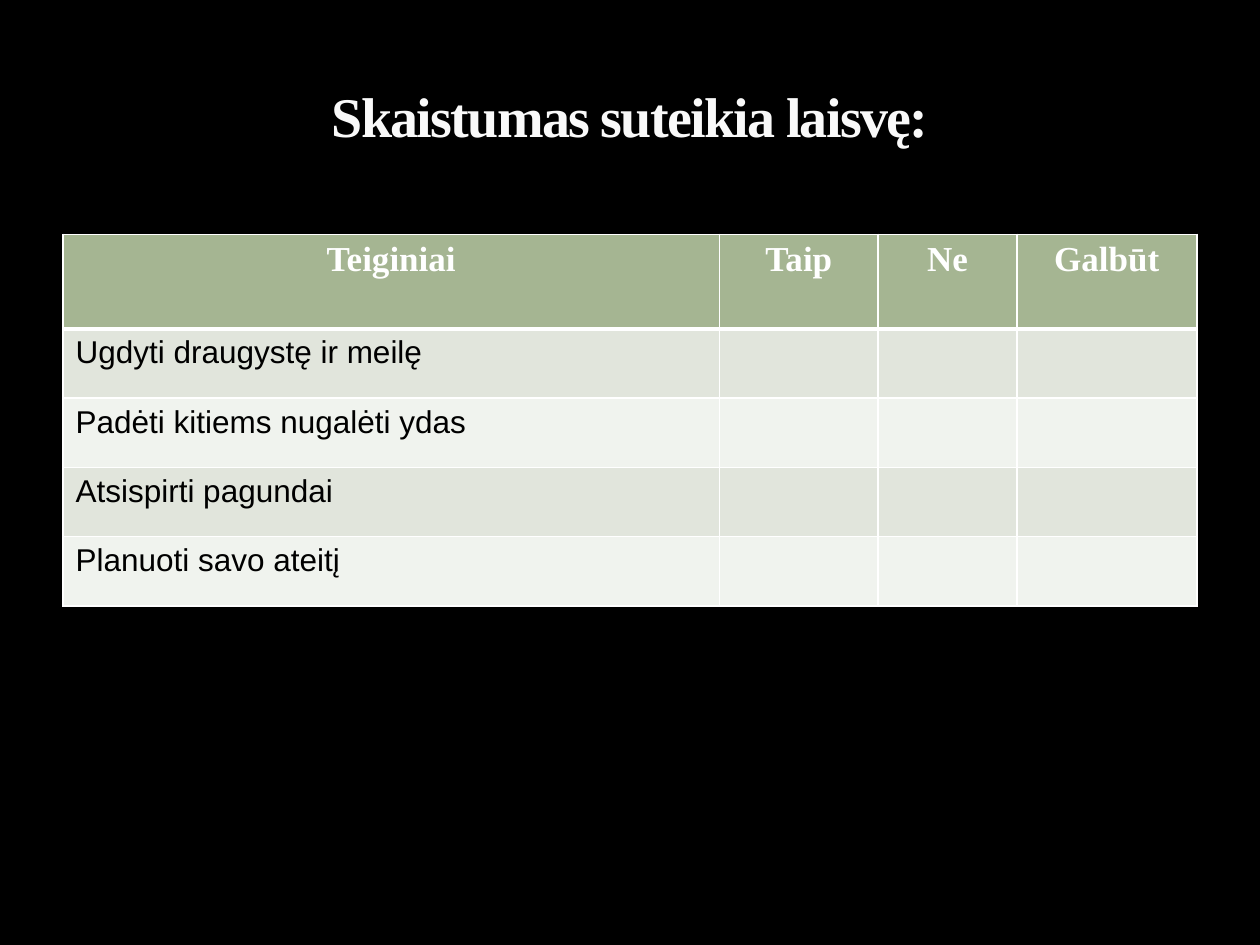
"""Build a slide with a titled table for answering statements about freedom."""
import lxml.etree
import pptx
import pptx.dml.color
import pptx.enum.text
import pptx.oxml.ns
import pptx.util

theme = {
    "back": "000000", "title": "F9F9F9", "line": "FFFFFF",
    "head": "A5B592", "bands": ["E1E5DC", "F0F3EE"],
    "light": "FFFFFF", "dark": "000000",
    "serif": "Times New Roman", "sans": "Arial",
    "title size": 32, "head size": 20, "body size": 18,
}
names = ["Teiginiai", "Taip", "Ne", "Galbūt"]
claims = ["Ugdyti draugystę ir meilę", "Padėti kitiems nugalėti ydas",
          "Atsispirti pagundai", "Planuoti savo ateitį"]
grid = [names] + [[claim, "", "", ""] for claim in claims]
widths = [5.21, 1.26, 1.1, 1.43]
heights = [0.75] + [0.55] * len(claims)
tint = pptx.dml.color.RGBColor.from_string
inch = pptx.util.Inches
center = pptx.enum.text.PP_ALIGN.CENTER


def style(para, face, size, color, bold):
    para.font.size = pptx.util.Pt(size)
    for run in para.runs:
        run.font.name = face
        run.font.size = pptx.util.Pt(size)
        run.font.bold = bold
        run.font.color.rgb = tint(color)


def border(cell, side, width):
    name = pptx.oxml.ns.qn
    props = cell._tc.get_or_add_tcPr()
    line = lxml.etree.SubElement(props, name(f"a:ln{side}"), w=str(pptx.util.Pt(width)))
    fill = lxml.etree.SubElement(line, name("a:solidFill"))
    lxml.etree.SubElement(fill, name("a:srgbClr"), val=theme["line"])


deck = pptx.Presentation()
deck.slide_width, deck.slide_height = inch(10), inch(7.5)
slide = deck.slides.add_slide(deck.slide_layouts[5])
slide.background.fill.solid()
slide.background.fill.fore_color.rgb = tint(theme["back"])

edge = int(deck.slide_width * 0.05)
wide = deck.slide_width - 2 * edge
title = slide.shapes.title
title.left, title.top = edge, inch(0.17)
title.width, title.height = wide, inch(1.06)
title.text_frame.text = "Skaistumas suteikia laisvę:"
title.text_frame.vertical_anchor = pptx.enum.text.MSO_ANCHOR.BOTTOM
para = title.text_frame.paragraphs[0]
para.alignment = center
style(para, theme["serif"], theme["title size"], theme["title"], True)
para.runs[0].font._element.set("spc", "-100")

frame = slide.shapes.add_table(len(grid), len(names), edge, inch(1.86),
                               wide, inch(sum(heights)))
table = frame.table
for col, width in zip(table.columns, widths):
    col.width = inch(width)
for row, height in zip(table.rows, heights):
    row.height = inch(height)

for r, texts in enumerate(grid):
    for c, text in enumerate(texts):
        cell = table.cell(r, c)
        for side in "LRTB":
            thick = (r, side) in [(0, "B"), (1, "T")]
            border(cell, side, 3 if thick else 1)
        cell.fill.solid()
        shade = theme["bands"][(r - 1) % 2] if r else theme["head"]
        cell.fill.fore_color.rgb = tint(shade)
        cell.text_frame.text = text
        para = cell.text_frame.paragraphs[0]
        if r == 0:
            para.alignment = center
            style(para, theme["serif"], theme["head size"], theme["light"], True)
        else:
            style(para, theme["sans"], theme["body size"], theme["dark"], False)

deck.save("out.pptx")
